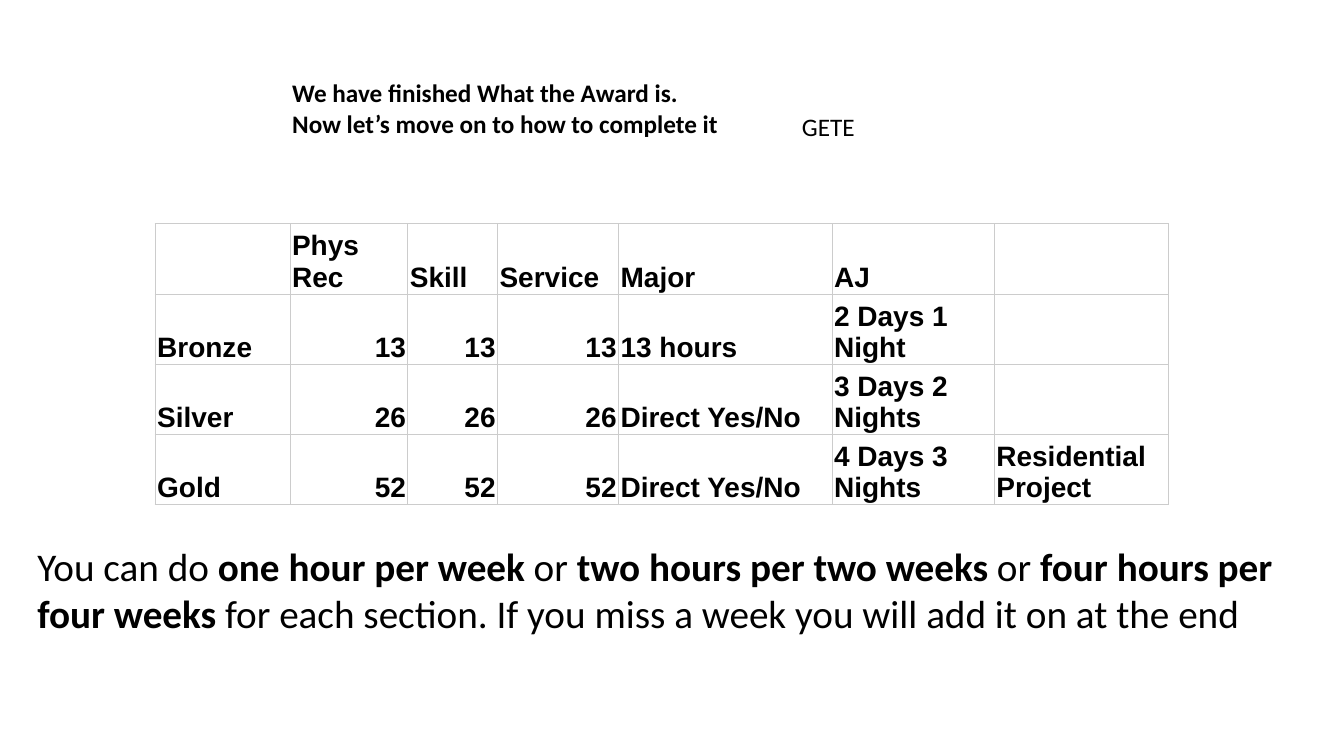
from dataclasses import dataclass

from lxml import etree
from pptx import Presentation
from pptx import util as u
from pptx.dml.color import RGBColor
from pptx.enum import text
from pptx.oxml.ns import qn


@dataclass(frozen=True)
class Theme:
    """Colours, fonts and type sizes of the slide."""

    ink: str = "000000"
    grid: str = "CCCCCC"
    text_font: str = "Calibri"
    table_font: str = "Arial"
    label_size: int = 18
    table_size: int = 20
    body_size: int = 28
    grid_width: float = 0.75


class AwardSlide:
    """Adds styled elements to the current slide."""

    def __init__(self, presentation, theme):
        self.theme = theme
        self.slide = presentation.slides.add_slide(presentation.slide_layouts[5])

    def style_font(self, font, name, size, bold=None):
        font.name = name
        font.size = u.Pt(size)
        font.bold = bold
        font.color.rgb = RGBColor.from_string(self.theme.ink)

    def add_title(self, lines, left, top, width, height):
        title = self.slide.shapes.title
        title.left, title.top = u.Cm(left), u.Cm(top)
        title.width, title.height = u.Cm(width), u.Cm(height)
        frame = title.text_frame
        frame.text = "\n".join(lines)
        frame.auto_size = text.MSO_AUTO_SIZE.NONE
        frame.vertical_anchor = text.MSO_ANCHOR.TOP
        for paragraph in frame.paragraphs:
            paragraph.alignment = text.PP_ALIGN.LEFT
            self.style_font(paragraph.font, self.theme.text_font, self.theme.label_size, True)

    def add_text(self, runs, size, left, top, width, height):
        box = self.slide.shapes.add_textbox(u.Cm(left), u.Cm(top), u.Cm(width), u.Cm(height))
        box.text_frame.word_wrap = True
        paragraph = box.text_frame.paragraphs[0]
        self.style_font(paragraph.font, self.theme.text_font, size)
        for words, bold in runs:
            run = paragraph.add_run()
            run.text = words
            if bold:
                run.font.bold = True

    def add_table(self, rows, column_widths, row_height, left, top):
        shape = self.slide.shapes.add_table(
            len(rows), len(column_widths), u.Cm(left), u.Cm(top),
            u.Cm(sum(column_widths)), u.Cm(row_height * len(rows)))
        table = shape.table
        table.first_row = table.horz_banding = False
        for column, width in zip(table.columns, column_widths):
            column.width = u.Cm(width)
        for row, values in zip(table.rows, rows):
            row.height = u.Cm(row_height)
            for cell, value in zip(row.cells, values):
                self.fill_cell(cell, value)

    def fill_cell(self, cell, value):
        cell.margin_left = cell.margin_right = u.Cm(0.05)
        cell.margin_top = cell.margin_bottom = u.Cm(0.03)
        cell.vertical_anchor = text.MSO_ANCHOR.BOTTOM
        cell.text = str(value)
        paragraph = cell.text_frame.paragraphs[0]
        if isinstance(value, int):
            paragraph.alignment = text.PP_ALIGN.RIGHT
        self.style_font(paragraph.font, self.theme.table_font, self.theme.table_size, True)
        self.add_borders(cell)
        cell.fill.background()

    def add_borders(self, cell):
        properties = cell._tc.get_or_add_tcPr()
        for side in ("a:lnL", "a:lnR", "a:lnT", "a:lnB"):
            line = etree.SubElement(properties, qn(side), w=str(u.Pt(self.theme.grid_width)))
            fill = etree.SubElement(line, qn("a:solidFill"))
            etree.SubElement(fill, qn("a:srgbClr"), val=self.theme.grid)


def main():
    presentation = Presentation()
    presentation.slide_width, presentation.slide_height = u.Cm(33.87), u.Cm(19.05)
    theme = Theme()
    slide = AwardSlide(presentation, theme)
    slide.add_title(
        ["We have finished What the Award is.", "Now let’s move on to how to complete it"],
        7.11, 1.83, 24.26, 1.8)
    slide.add_text(
        [("You can do ", False), ("one hour per week ", True), ("or ", False),
         ("two hours per two weeks ", True), ("or ", False), ("four hours per four weeks", True),
         (" for each section. If you miss a week you will add it on at the end", False)],
        theme.body_size, 0.69, 13.54, 31.85, 2.64)
    slide.add_table(
        [["", "Phys Rec", "Skill", "Service", "Major", "AJ", ""],
         ["Bronze", 13, 13, 13, "13 hours", "2 Days 1 Night", ""],
         ["Silver", 26, 26, 26, "Direct Yes/No", "3 Days 2 Nights", ""],
         ["Gold", 52, 52, 52, "Direct Yes/No", "4 Days 3 Nights", "Residential Project"]],
        [3.4, 2.97, 2.26, 3.05, 5.38, 4.09, 4.39], 1.77, 3.91, 5.64)
    slide.add_text([("GETE", False)], theme.label_size, 19.96, 2.67, 3.96, 1.02)
    presentation.save("out.pptx")


if __name__ == "__main__":
    main()
